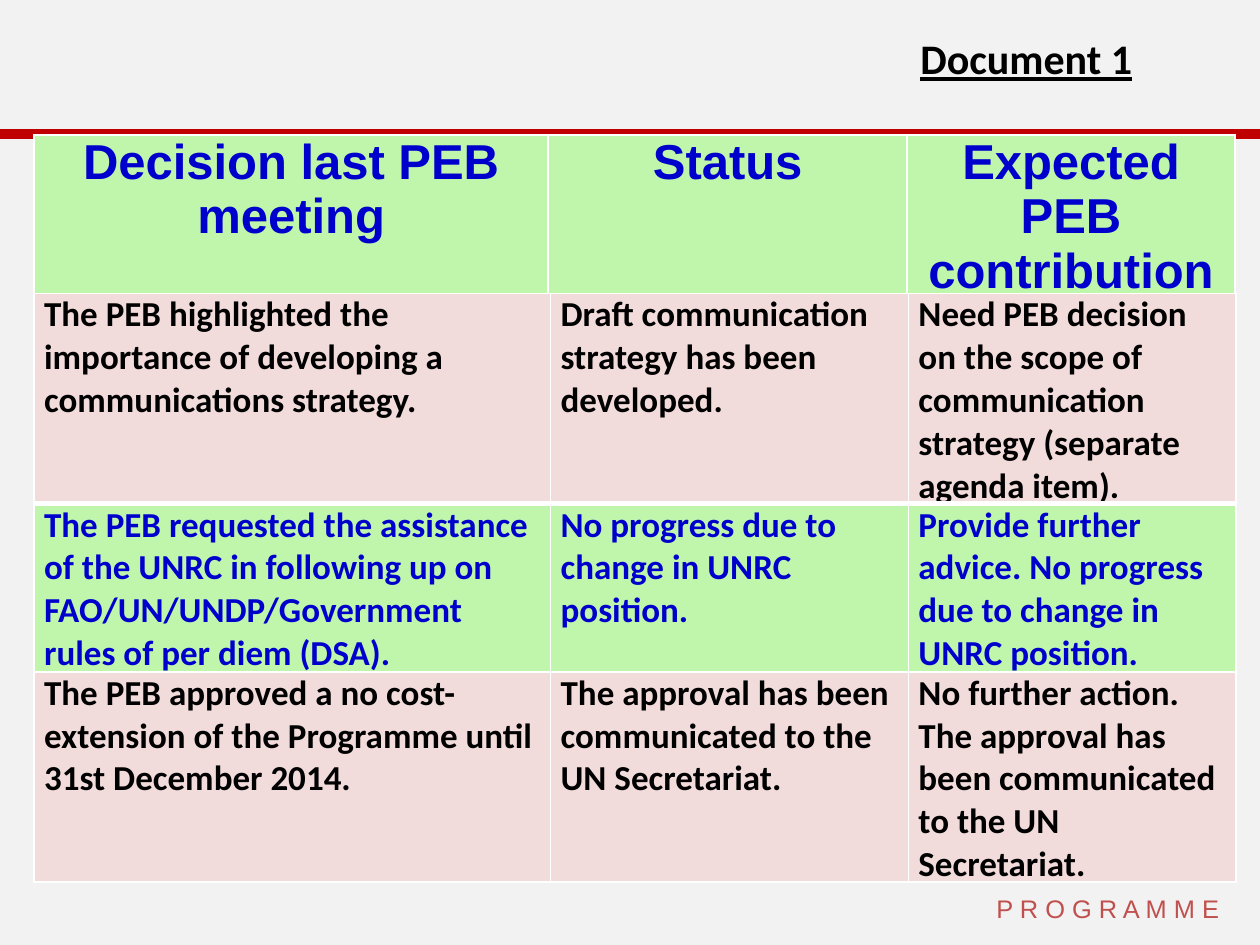
from dataclasses import dataclass

from lxml import etree
from pptx import Presentation
from pptx import util as u
from pptx.dml import color
from pptx.enum import shapes, text
from pptx.oxml import ns

TITLE = "Document 1"
FOOTER = "P R O G R A M M E"
HEADINGS = [["Decision last PEB meeting", "Status", "Expected PEB contribution"]]
DECISIONS = [
    ["The PEB highlighted the importance of developing a communications strategy.",
     "Draft communication strategy has been developed.",
     "Need PEB decision on the scope of communication strategy (separate agenda item)."],
    ["The PEB requested the assistance of the UNRC in following up on FAO/UN/UNDP/Government rules of per diem (DSA).",
     "No progress due to change in UNRC position.",
     "Provide further advice. No progress due to change in UNRC position."],
    ["The PEB approved a no cost-extension of the Programme until 31st December 2014.",
     "The approval has been communicated to the UN Secretariat.",
     "No further action. The approval has been communicated to the UN Secretariat."],
]


@dataclass(frozen=True)
class Theme:
    background: str = "F2F2F2"
    bar: str = "C00000"
    footer: str = "C0504D"
    blue: str = "0000CC"
    black: str = "000000"
    green: str = "BFF6AC"
    pink: str = "F2DCDB"
    border: str = "FFFFFF"
    heading_size: float = 28
    title_size: float = 24
    body_size: float = 20
    footer_size: float = 14.5


THEME = Theme()
WIDTH, HEIGHT = 10, 7.5
TABLE_LEFT = 0.27
THIN, THICK = 1, 3

HEADING = dict(name="Arial", size=THEME.heading_size, bold=True, color=THEME.blue)
BODY = dict(name="Calibri", size=THEME.body_size, bold=True, color=THEME.black)
BODY_BLUE = {**BODY, "color": THEME.blue}
TITLE_FONT = {**BODY, "size": THEME.title_size, "underline": True}
FOOTER_FONT = dict(name="Arial", size=THEME.footer_size, bold=False, color=THEME.footer)

HEADING_ROWS = [(THEME.green, HEADING, THICK)]
DECISION_ROWS = [
    (THEME.pink, BODY, THICK),
    (THEME.green, BODY_BLUE, THIN),
    (THEME.pink, BODY, THIN),
]


def paint(fill, rgb):
    fill.solid()
    fill.fore_color.rgb = color.RGBColor.from_string(rgb)


def write(frame, content, font_format, alignment):
    paragraph = frame.paragraphs[0]
    paragraph.alignment = alignment
    run = paragraph.add_run()
    run.text = content
    for key, value in font_format.items():
        if key == "color":
            run.font.color.rgb = color.RGBColor.from_string(value)
        else:
            setattr(run.font, key, u.Pt(value) if key == "size" else value)


def set_borders(cell, bottom):
    properties = cell._tc.get_or_add_tcPr()
    widths = {"lnL": THIN, "lnR": THIN, "lnT": THIN, "lnB": bottom}
    for position, (side, width) in enumerate(widths.items()):
        line = etree.Element(ns.qn(f"a:{side}"), w=str(u.Pt(width)))
        fill = etree.SubElement(line, ns.qn("a:solidFill"))
        etree.SubElement(fill, ns.qn("a:srgbClr"), val=THEME.border)
        properties.insert(position, line)


def add_grid(slide, content, row_styles, top, height, columns, rows, alignment):
    shape = slide.shapes.add_table(
        len(rows), len(columns), u.Inches(TABLE_LEFT), u.Inches(top),
        u.Inches(sum(columns)), u.Inches(height))
    table = shape.table
    for column, width in zip(table.columns, columns):
        column.width = u.Inches(width)
    for row, row_height, texts, style in zip(table.rows, rows, content, row_styles):
        row.height = u.Inches(row_height)
        fill, font_format, bottom = style
        for cell, value in zip(row.cells, texts):
            cell.margin_left = cell.margin_right = u.Inches(0.08)
            cell.margin_top = cell.margin_bottom = 0
            paint(cell.fill, fill)
            set_borders(cell, bottom)
            write(cell.text_frame, value, font_format, alignment)
    shape.height = u.Inches(height)


def main():
    presentation = Presentation()
    presentation.slide_width = u.Inches(WIDTH)
    presentation.slide_height = u.Inches(HEIGHT)
    slide = presentation.slides.add_slide(presentation.slide_layouts[5])
    paint(slide.background.fill, THEME.background)

    bar = slide.shapes.add_shape(
        shapes.MSO_SHAPE.FLOWCHART_PROCESS, 0, u.Inches(1.02), u.Inches(WIDTH), u.Inches(0.08))
    bar.shadow.inherit = False
    paint(bar.fill, THEME.bar)
    bar.line.fill.background()

    footer = slide.shapes.add_textbox(u.Inches(7.81), u.Inches(7.04), u.Inches(2.15), u.Inches(0.34))
    footer.text_frame.word_wrap = True
    write(footer.text_frame, FOOTER, FOOTER_FONT, text.PP_ALIGN.LEFT)

    add_grid(slide, HEADINGS, HEADING_ROWS, 1.07, 1.18,
             [4.08, 2.85, 2.6], [1.18], text.PP_ALIGN.CENTER)
    add_grid(slide, DECISIONS, DECISION_ROWS, 2.33, 4.67,
             [4.1, 2.84, 2.6], [1.18, 1.26, 1.02], text.PP_ALIGN.LEFT)

    title = slide.shapes.title
    box = dict(left=6.65, top=0.21, width=2.99, height=0.63)
    for key, value in box.items():
        setattr(title, key, u.Inches(value))
    title.text_frame.vertical_anchor = text.MSO_ANCHOR.TOP
    title.text_frame.auto_size = text.MSO_AUTO_SIZE.NONE
    write(title.text_frame, TITLE, TITLE_FONT, text.PP_ALIGN.CENTER)

    presentation.save("out.pptx")


if __name__ == "__main__":
    main()
